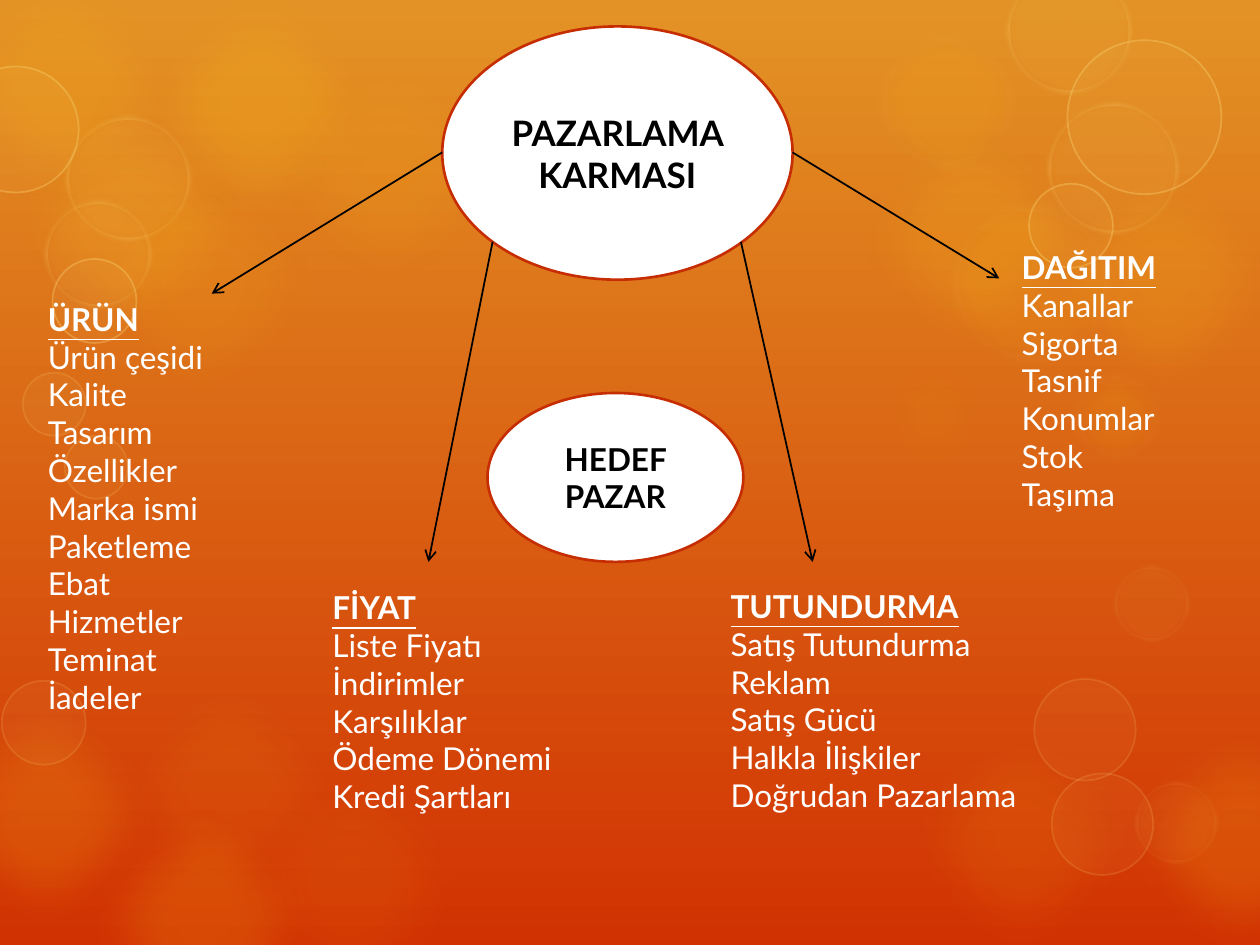
from lxml.etree import SubElement
from pptx import Presentation
from pptx.dml.color import RGBColor
from pptx.enum.shapes import MSO_CONNECTOR, MSO_SHAPE
from pptx.enum.text import MSO_ANCHOR, MSO_AUTO_SIZE, PP_ALIGN
from pptx.oxml.ns import qn
from pptx.util import Pt

COLORS = {
    "sky": "E39325", "ember": "D13202", "gold": "FDC61B", "pale": "FFE281",
    "halo": "FEEBAE", "white": "FFFFFF", "black": "000000", "rim": "C62D03",
}

# Soft glows by opacity: centre x, centre y, radius
GLOWS = {
    8: [(131, 452, 75), (200, 505, 75)],
    10: [(116, 162, 75), (223, 98, 75), (584, 480, 75), (534, 236.5, 48)],
    14: [(35, 52, 75)],
    15: [(75, 127, 75), (665, 161, 75), (557, 137, 75)],
    16: [(116, 526, 75), (709, 480, 75), (26, 465, 75)],
    20: [(148, 62, 75)],
}
# Wide halos with a faint broad edge
HALOS = [(541, 58, 41), (589, 162, 48), (638, 238, 28)]
# Rings by line width and line opacity
RINGS = {
    (1, 15): [(25, 413, 24), (630, 471, 29), (620, 417, 29), (31, 231, 18), (55, 267, 18)],
    (1, 30): [(9, 74, 36), (54, 172, 24), (654, 67, 44), (612, 129, 24)],
    (5, 15): [(658, 345, 22), (672, 470, 24)],
    (5, 30): [(73, 102, 36), (56, 145, 31), (611, 18, 36), (636, 96, 38)],
}

# Marketing mix: left, top, width, height, heading, items
MIX = [
    (20.2, 167.8, 118, 247, "ÜRÜN",
     ["Ürün çeşidi", "Kalite", "Tasarım", "Özellikler", "Marka ismi", "Paketleme",
      "Ebat", "Hizmetler", "Teminat", "İadeler"]),
    (182.9, 332.6, 160.6, 138, "FİYAT",
     ["Liste Fiyatı", "İndirimler", "Karşılıklar", "Ödeme Dönemi", "Kredi Şartları"]),
    (410.4, 331.9, 205, 160, "TUTUNDURMA",
     ["Satış Tutundurma", "Reklam", "Satış Gücü", "Halkla İlişkiler",
      "Doğrudan Pazarlama"]),
    (576.7, 138.2, 132.5, 160, "DAĞITIM",
     ["Kanallar", "Sigorta", "Tasnif", "Konumlar", "Stok", "Taşıma"]),
]
ARROWS = [
    (252.7, 87.1, 121, 167.8), (281.5, 138.2, 244.8, 321.1),
    (423.4, 138.2, 464.4, 321.1), (452.9, 87.1, 571, 159.1),
]


def rgb(name):
    return RGBColor.from_string(COLORS[name])


def write(paragraph, text, font="Lato", size=18, color="white", bold=False,
          underline=False, align=PP_ALIGN.LEFT):
    paragraph.alignment = align
    run = paragraph.add_run()
    run.text = text
    run.font.name, run.font.size = font, Pt(size)
    run.font.bold, run.font.underline = bold, underline
    run.font.color.rgb = rgb(color)


def set_opacity(color_parent, percent):
    color = color_parent.find(f"{qn('a:solidFill')}/{qn('a:srgbClr')}")
    SubElement(color, qn("a:alpha"), val=str(percent * 1000))


class SlideBuilder:
    def __init__(self, slide):
        self.slide = slide
        self.shapes = slide.shapes

    def background(self, top, bottom):
        fill = self.slide.background.fill
        fill.gradient()
        fill.gradient_angle = 270
        for stop, color in zip(fill.gradient_stops, (top, bottom)):
            stop.color.rgb = rgb(color)

    def oval(self, left, top, width, height, fill, line=None, line_width=0):
        oval = self.shapes.add_shape(MSO_SHAPE.OVAL, Pt(left), Pt(top),
                                     Pt(width), Pt(height))
        oval.shadow.inherit = False
        oval.fill.solid()
        oval.fill.fore_color.rgb = rgb(fill)
        if line:
            oval.line.color.rgb = rgb(line)
            oval.line.width = Pt(line_width)
        else:
            oval.line.fill.background()
        return oval

    def light(self, x, y, radius, fill, opacity, line=None, line_width=0,
              line_opacity=0, soft=0):
        disc = self.oval(x - radius, y - radius, 2 * radius, 2 * radius,
                         fill, line, line_width)
        properties = disc.element.spPr
        set_opacity(properties, opacity)
        if line:
            set_opacity(properties.find(qn("a:ln")), line_opacity)
        if soft:
            SubElement(properties.find(qn("a:effectLst")), qn("a:softEdge"),
                       rad=str(Pt(soft)))

    def bubble(self, left, top, width, height, text, size):
        frame = self.oval(left, top, width, height, "white", "rim", 1.5).text_frame
        frame.word_wrap = True
        frame.vertical_anchor = MSO_ANCHOR.MIDDLE
        write(frame.paragraphs[0], text, size=size, color="black",
              bold=True, align=PP_ALIGN.CENTER)

    def arrow(self, *ends):
        link = self.shapes.add_connector(MSO_CONNECTOR.STRAIGHT, *map(Pt, ends))
        link.line.color.rgb = rgb("black")
        link.line.width = Pt(1)
        properties = link.element.spPr
        SubElement(properties.find(qn("a:ln")), qn("a:tailEnd"), type="arrow")
        SubElement(properties, qn("a:effectLst"))

    def item_list(self, left, top, width, height, heading, items):
        frame = self.shapes.add_textbox(Pt(left), Pt(top), Pt(width), Pt(height)).text_frame
        frame.word_wrap = True
        frame.auto_size = MSO_AUTO_SIZE.SHAPE_TO_FIT_TEXT
        write(frame.paragraphs[0], heading, bold=True, underline=True)
        for item in items:
            write(frame.add_paragraph(), item)


def main():
    deck = Presentation()
    deck.slide_width, deck.slide_height = Pt(720), Pt(540)
    builder = SlideBuilder(deck.slides.add_slide(deck.slide_layouts[6]))

    # Backdrop of lights
    builder.background("sky", "ember")
    for opacity, glows in GLOWS.items():
        for glow in glows:
            builder.light(*glow, "gold", opacity, soft=25)
    for halo in HALOS:
        builder.light(*halo, "gold", 10, "halo", 14, 6, soft=12)
    for (line_width, line_opacity), rings in RINGS.items():
        for ring in rings:
            builder.light(*ring, "pale", 5, "pale", line_width, line_opacity,
                          soft=4 if line_width > 1 else 0)

    # Centre bubbles
    builder.bubble(252.7, 15.1, 200.2, 144.7, "PAZARLAMA KARMASI", 20)
    builder.bubble(278.6, 224.6, 146.2, 96.5, "HEDEF PAZAR", 18)

    # Arrows to the four parts of the mix
    for ends in ARROWS:
        builder.arrow(*ends)
    for part in MIX:
        builder.item_list(*part)

    deck.save("out.pptx")


if __name__ == "__main__":
    main()
